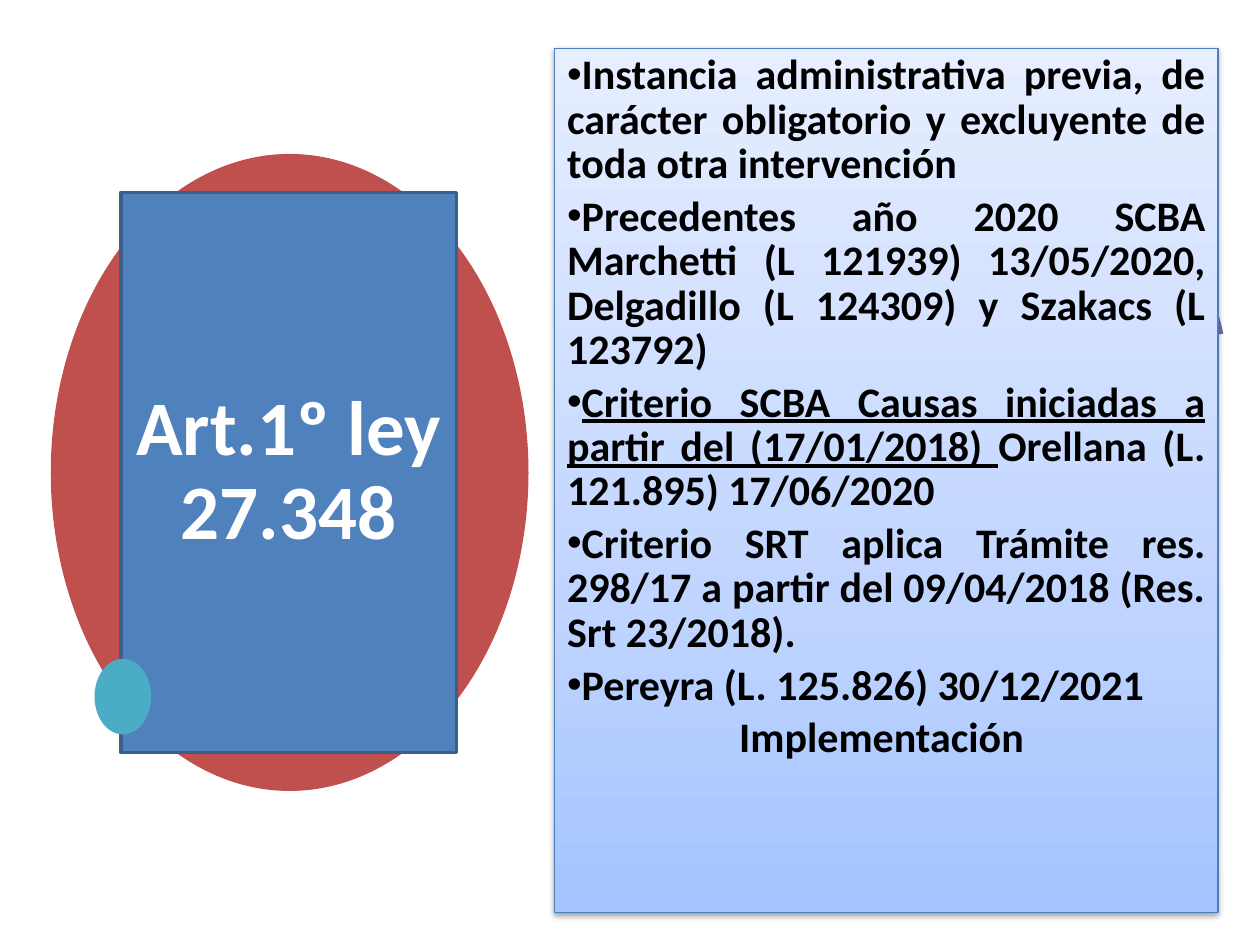
"""Build the slide on article 1 of law 27.348."""
from copy import deepcopy

from lxml import etree
from pptx import Presentation
from pptx.dml.color import RGBColor
from pptx.enum.dml import MSO_LINE
from pptx.enum.shapes import MSO_SHAPE
from pptx.enum.text import MSO_ANCHOR, PP_ALIGN
from pptx.oxml.ns import qn
from pptx.util import Pt

ELLIPSE, RECTANGLE, ARC = MSO_SHAPE.OVAL, MSO_SHAPE.RECTANGLE, MSO_SHAPE.ARC
CENTER, JUSTIFY = PP_ALIGN.CENTER, PP_ALIGN.JUSTIFY
MIDDLE, TOP = MSO_ANCHOR.MIDDLE, MSO_ANCHOR.TOP
DASH = MSO_LINE.DASH

RED = RGBColor(0xC0, 0x50, 0x4D)
BLUE = RGBColor(0x4F, 0x81, 0xBD)
DARK_BLUE = RGBColor(0x3A, 0x5F, 0x8C)
EDGE_BLUE = RGBColor(0x4B, 0x7E, 0xBC)
PURPLE = RGBColor(0x80, 0x64, 0xA2)
TEAL = RGBColor(0x4B, 0xAC, 0xC6)
WHITE = RGBColor(0xFF, 0xFF, 0xFF)
BLACK = RGBColor(0, 0, 0)
PANEL_STOPS = [
    (0, RGBColor(0xA4, 0xC4, 0xFF)),
    (0.35, RGBColor(0xBF, 0xD4, 0xFF)),
    (1, RGBColor(0xE6, 0xEE, 0xFF)),
]

TITLE_FONT = {"name": "Calibri", "size": Pt(44), "bold": True}
BODY_FONT = {"name": "Calibri", "size": Pt(24), "bold": True}
TITLE_FORMAT = {"alignment": CENTER, "line_spacing": 0.9}
BODY_FORMAT = {"alignment": JUSTIFY, "line_spacing": 0.88, "space_before": Pt(4.8)}
CLOSING_FORMAT = {**BODY_FORMAT, "alignment": CENTER}

RULINGS = [
    [("Instancia administrativa previa, de carácter obligatorio y excluyente de toda otra intervención ", False)],
    [("Precedentes año 2020 SCBA Marchetti (L 121939) 13/05/2020, Delgadillo (L 124309) y Szakacs (L 123792) ", False)],
    [("Criterio SCBA Causas iniciadas a partir del (17/01/2018) ", True),
     ("Orellana (L. 121.895) 17/06/2020", False)],
    [("Criterio SRT aplica Trámite res. 298/17 a partir del 09/04/2018 (Res. Srt 23/2018).", False)],
    [("Pereyra (L. 125.826) 30/12/2021", False)],
]


class SlideBuilder:
    """Hold the text style and the current slide, and draw its elements."""

    def __init__(self, slide):
        self.slide = slide

    def shape(self, kind, box, fill=None, line=None):
        """Draw a preset shape; line is a (colour, width) pair."""
        shape = self.slide.shapes.add_shape(kind, *(Pt(length) for length in box))
        shape.shadow.inherit = False
        if fill is None:
            shape.fill.background()
        else:
            shape.fill.solid()
            shape.fill.fore_color.rgb = fill
        if line is None:
            shape.line.fill.background()
        else:
            shape.line.color.rgb, shape.line.width = line[0], Pt(line[1])
        return shape

    def gradient(self, shape, stops):
        """Fill a shape from bottom to top with the given stops."""
        shape.fill.gradient()
        shape.fill.gradient_angle = 90
        stop_list = shape.fill._xPr.find(".//" + qn("a:gsLst"))
        while len(stop_list) < len(stops):
            stop_list.append(deepcopy(stop_list[0]))
        for stop, (position, color) in zip(shape.fill.gradient_stops, stops):
            stop.position = position
            stop.color.rgb = color

    def shadow(self, shape, blur, distance, opacity):
        """Cast a soft black shadow downwards."""
        effects = shape._element.spPr.find(qn("a:effectLst"))
        outer = etree.SubElement(
            effects, qn("a:outerShdw"), blurRad=str(Pt(blur)), dist=str(Pt(distance)),
            dir="5400000", rotWithShape="0")
        black = etree.SubElement(outer, qn("a:srgbClr"), val="000000")
        etree.SubElement(black, qn("a:alpha"), val=str(opacity * 1000))

    def text(self, shape, paragraphs, font, layout, color, anchor):
        """Append paragraphs of (text, underlined) runs and return them."""
        frame = shape.text_frame
        frame.word_wrap = True
        frame.vertical_anchor = anchor
        written = []
        for runs in paragraphs:
            paragraph = frame.add_paragraph() if frame.text else frame.paragraphs[0]
            for key, value in layout.items():
                setattr(paragraph, key, value)
            for content, underlined in runs:
                run = paragraph.add_run()
                run.text = content
                for key, value in {**font, "underline": underlined}.items():
                    setattr(run.font, key, value)
                run.font.color.rgb = color
            written.append(paragraph)
        return written

    def bullet(self, paragraph):
        """Give a paragraph a hanging round bullet."""
        properties = paragraph._p.get_or_add_pPr()
        properties.set("marL", "0")
        properties.set("indent", str(-Pt(18)))
        etree.SubElement(properties, qn("a:buFont"), typeface="Arial")
        etree.SubElement(properties, qn("a:buChar"), char="•")


def main():
    """Build and save the slide."""
    deck = Presentation()
    deck.slide_width, deck.slide_height = Pt(720), Pt(540)
    builder = SlideBuilder(deck.slides.add_slide(deck.slide_layouts[6]))

    builder.shape(ELLIPSE, (29, 88, 273, 364), RED)
    law_title = builder.shape(RECTANGLE, (69, 110, 192, 320), BLUE, (DARK_BLUE, 2))
    builder.text(law_title, [[("Art.1º ley 27.348", False)]],
                 TITLE_FONT, TITLE_FORMAT, WHITE, MIDDLE)

    sweep = builder.shape(ARC, (512.6, 74.2, 176.4, 235.4), line=(PURPLE, 10))
    sweep.adjustments[0], sweep.adjustments[1] = 158.17, 17.81
    sweep.rotation = 330.2
    sweep.line.dash_style = DASH
    builder.shape(ELLIPSE, (54, 376.5, 32.4, 43.2), TEAL)

    rulings_panel = builder.shape(RECTANGLE, (317, 27.6, 379, 494), line=(EDGE_BLUE, 0.75))
    builder.gradient(rulings_panel, PANEL_STOPS)
    builder.shadow(rulings_panel, 3.1, 1.6, 38)
    for ruling in builder.text(rulings_panel, RULINGS, BODY_FONT, BODY_FORMAT, BLACK, TOP):
        builder.bullet(ruling)
    builder.text(rulings_panel, [[("Implementación ", False)]],
                 BODY_FONT, CLOSING_FORMAT, BLACK, TOP)

    deck.save("out.pptx")


if __name__ == "__main__":
    main()
